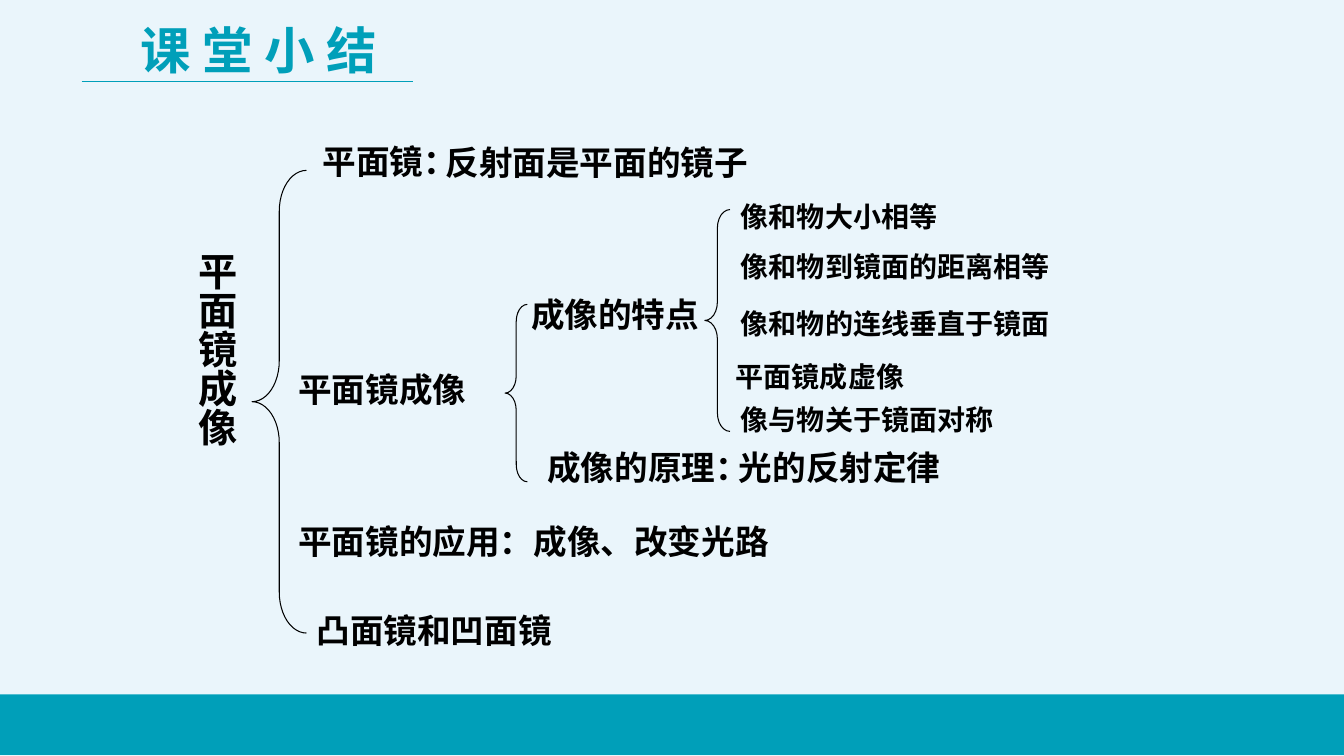
from lxml import etree
from pptx import Presentation
from pptx.dml.color import RGBColor
from pptx.enum.shapes import MSO_CONNECTOR as Connector, MSO_SHAPE as Preset
from pptx.oxml.ns import qn
from pptx.util import Inches, Pt

TEAL = RGBColor(0x00, 0x9F, 0xB9)
PALE_BLUE = RGBColor(0xEA, 0xF5, 0xFB)
BLACK = RGBColor(0, 0, 0)
CHINESE_FONT = "Noto Sans CJK SC"
TEXT_HEIGHT = 0.5


def add_panel(slide, left, top, width, height, color):
    shape = slide.shapes.add_shape(
        Preset.RECTANGLE, Inches(left), Inches(top), Inches(width), Inches(height))
    shape.shadow.inherit = False
    shape.fill.solid()
    shape.fill.fore_color.rgb = color
    shape.line.fill.background()


def add_text(slide, left, top, width, height, runs, size, color=BLACK, vertical=False):
    """Place one line of bold text; runs holds (text, font name) pairs."""
    box = slide.shapes.add_textbox(
        Inches(left), Inches(top), Inches(width), Inches(height))
    frame = box.text_frame
    frame.word_wrap = True
    if vertical:
        frame._txBody.bodyPr.set("vert", "eaVert")
    for text, font_name in runs:
        run = frame.paragraphs[0].add_run()
        run.text = text
        font = run.font
        font.name, font.size, font.bold = font_name, Pt(size), True
        font.color.rgb = color
        east_asian = etree.SubElement(run._r.get_or_add_rPr(), qn("a:ea"))
        east_asian.set("typeface", CHINESE_FONT)


def add_brace(slide, left, top, width, height, curve):
    brace = slide.shapes.add_shape(
        Preset.LEFT_BRACE, Inches(left), Inches(top), Inches(width), Inches(height))
    brace.shadow.inherit = False
    brace.adjustments[0] = curve
    brace.adjustments[1] = 0.5
    brace.fill.background()
    brace.line.color.rgb = BLACK
    brace.line.width = Pt(0.75)


def add_background(slide, left, width):
    add_panel(slide, left, 0, width, 7.5, PALE_BLUE)
    add_panel(slide, left, 6.89, width, 0.6, TEAL)


def add_heading(slide, left, top, width):
    add_text(slide, left + 0.49, top, 2.96, 0.71,
             [("课 堂 小 结", CHINESE_FONT)], 36, TEAL)
    rule_top = Inches(top + 0.67)
    rule = slide.shapes.add_connector(
        Connector.STRAIGHT, Inches(left), rule_top, Inches(left + width), rule_top)
    rule.line.color.rgb = TEAL
    rule.line.width = Pt(0.5)
    etree.SubElement(rule._element.spPr, qn("a:effectLst"))


def add_main_branches(slide, left, top):
    # Root topic and its brace
    add_text(slide, left, top + 1.05, 0.67, 3.16,
             [("平面镜成像", "Arial")], 28, vertical=True)
    add_brace(slide, left + 0.74, top + 0.34, 0.54, 4.59, 0.75)

    # Branches as offset from the root, width and text
    branches = [
        (1.34, 0, 1.49, "平面镜："),
        (2.56, 0.01, 5.04, "反射面是平面的镜子"),
        (1.1, 2.26, 2.2, "平面镜成像"),
        (1.1, 3.77, 5.62, "平面镜的应用：成像、改变光路"),
        (1.28, 4.65, 2.75, "凸面镜和凹面镜"),
    ]
    for across, down, width, text in branches:
        add_text(slide, left + across, top + down, width, TEXT_HEIGHT,
                 [(text, "Karla")], 24)


def add_imaging_branch(slide, left, top):
    add_brace(slide, left, top + 0.15, 0.22, 1.76, 0.78)
    add_text(slide, left + 0.16, top, 2.2, TEXT_HEIGHT,
             [("成像的特点", "Karla")], 24)
    add_text(slide, left + 0.32, top + 1.51, 2.4, TEXT_HEIGHT,
             [("成像的原理", "Karla"), ("：", "Arial")], 24)
    add_text(slide, left + 2.22, top + 1.51, 2.4, TEXT_HEIGHT,
             [("光的反射定律", "Karla")], 24)


def add_features(slide, left, top):
    add_brace(slide, left, top + 0.15, 0.25, 2.2, 0.73)
    features = [
        (0.26, 0, "像和物大小相等"),
        (0.26, 0.5, "像和物到镜面的距离相等"),
        (0.26, 1.06, "像和物的连线垂直于镜面"),
        (0.21, 1.59, "平面镜成虚像"),
        (0.26, 2.01, "像与物关于镜面对称"),
    ]
    for across, down, text in features:
        add_text(slide, left + across, top + down, 3.74, 0.44, [(text, "Karla")], 20)


def main():
    presentation = Presentation()
    presentation.slide_width = Inches(13.33)
    presentation.slide_height = Inches(7.5)
    slide = presentation.slides.add_slide(presentation.slide_layouts[6])

    add_background(slide, -0.03, 13.39)
    add_heading(slide, 0.81, 0.14, 3.29)
    add_main_branches(slide, 1.76, 1.35)
    add_imaging_branch(slide, 5.01, 2.87)
    add_features(slide, 6.99, 1.93)

    presentation.save("out.pptx")


if __name__ == "__main__":
    main()
